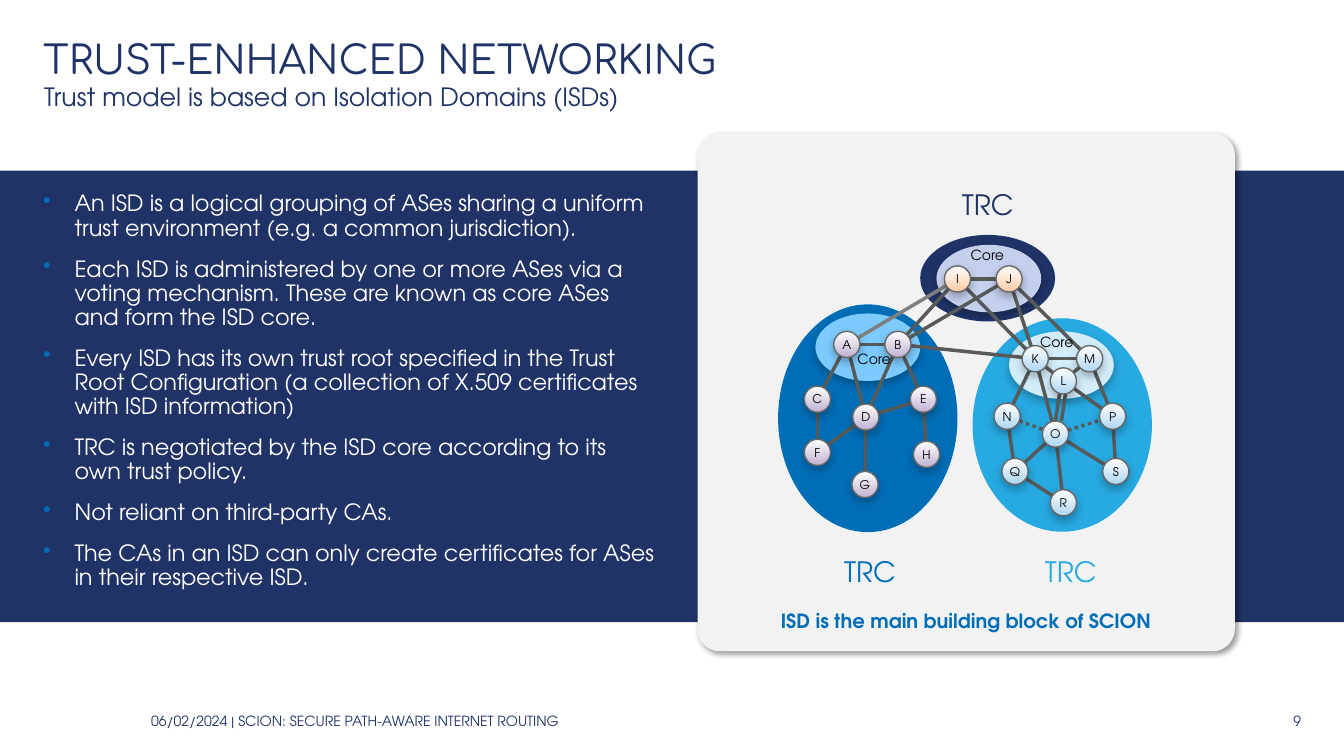
from dataclasses import dataclass
from math import hypot

from lxml.etree import SubElement
from pptx import Presentation
from pptx.dml.color import RGBColor
from pptx.enum.dml import MSO_LINE
from pptx.enum.shapes import MSO_CONNECTOR, MSO_SHAPE as SHAPE
from pptx.enum.text import MSO_ANCHOR as ANCHOR, PP_ALIGN as ALIGN
from pptx.oxml.ns import qn
from pptx.util import Cm, Pt


@dataclass(frozen=True)
class Theme:
    head_font: str = "Comfortaa"
    font: str = "TeX Gyre Adventor"
    navy: str = "203367"
    blue: str = "006EB7"
    sky: str = "27A9E1"
    card: str = "F2F2F2"
    white: str = "FFFFFF"
    black: str = "000000"
    navy_core: str = "C4D0ED"
    blue_core: str = "7CCAFF"
    sky_core: str = "D2EDF9"
    link: str = "585959"
    pale_link: str = "7F7F7F"
    rim: str = "676767"
    peach: str = "FBCBA3"
    lilac: str = "C0B1D1"
    ice: str = "ADD6F2"
    title: float = 28
    trc: float = 20
    subtitle: float = 18
    body: float = 16
    caption: float = 14
    small: float = 10
    node: float = 8.6


T = Theme()
NODE_SIZE = 0.66  # all lengths are in centimetres

BULLETS = [
    "An ISD is a logical grouping of ASes sharing a uniform trust environment (e.g. a common jurisdiction).",
    "Each ISD is administered by one or more ASes via a voting mechanism. "
    "These are known as core ASes and form the ISD core.",
    "Every ISD has its own trust root specified in the Trust Root Configuration "
    "(a collection of X.509 certificates with ISD information)",
    "TRC is negotiated by the ISD core according to its own trust policy.",
    "Not reliant on third-party CAs.",
    "The CAs in an ISD can only create certificates for ASes in their respective ISD.",
]

# Boxes and node centres are relative to the top left of the card.
# Each domain: colour, oval, core colour, core corner, core label corner, TRC corner
DOMAINS = [
    (T.blue, (2.03, 4.32, 4.52, 5.74), T.blue_core, (2.97, 4.55), (3.78, 5.36), (3.2, 10.54)),
    (T.navy, (5.61, 2.57, 3.4, 2.18), T.navy_core, (6.02, 2.82), (6.63, 2.74), (6.17, 1.3)),
    (T.sky, (6.93, 4.67, 4.52, 5.38), T.sky_core, (7.85, 5.0), (8.38, 4.93), (8.26, 10.54)),
]
NODES = {
    T.lilac: {"A": (3.76, 5.33), "B": (5.05, 5.33), "C": (3.02, 6.71), "D": (4.24, 7.16),
              "E": (5.69, 6.71), "F": (3.02, 8.05), "G": (4.22, 8.86), "H": (5.77, 8.1)},
    T.peach: {"I": (6.55, 3.68), "J": (7.85, 3.68)},
    T.ice: {"K": (8.51, 5.69), "L": (9.22, 6.25), "M": (9.88, 5.69), "N": (7.8, 7.14),
            "O": (9.02, 7.59), "P": (10.46, 7.14), "Q": (8.0, 8.53), "R": (9.22, 9.32),
            "S": (10.54, 8.53)},
}
LINKS = ("AB AC AD BD BE CF DE DF DG EH IJ BI BJ IK JK JM BK "
         "KM KL LM KN KO LP MP NQ OQ OR OS PS QR").split()
DOTTED_LINKS = ["NO", "OP"]
DOUBLE_LINK = "LO"


def rgb(color):
    return RGBColor.from_string(color)


def add_run(p, text, size, color, font=T.font, bold=False):
    r = p.add_run()
    r.text = text
    r.font.name, r.font.size, r.font.bold = font, Pt(size), bold
    r.font.color.rgb = rgb(color)


def add_text(s, box, text, size, color, align=ALIGN.LEFT, anchor=ANCHOR.TOP,
             font=T.font, bold=False, wrap=True):
    tf = s.shapes.add_textbox(*map(Cm, box)).text_frame
    set_frame(tf, anchor, wrap)
    p = tf.paragraphs[0]
    p.alignment = align
    add_run(p, text, size, color, font, bold)
    return p


def set_frame(tf, anchor, wrap):
    tf.margin_left = tf.margin_right = tf.margin_top = tf.margin_bottom = 0
    tf.vertical_anchor, tf.word_wrap = anchor, wrap


def add_filled(s, kind, box, color):
    sp = s.shapes.add_shape(kind, *map(Cm, box))
    sp.shadow.inherit = False
    sp.fill.solid()
    sp.fill.fore_color.rgb = rgb(color)
    sp.line.fill.background()
    return sp


def add_shadow(sp, alpha, blur, dist, angle):
    effects = sp._element.spPr.find(qn("a:effectLst"))
    shadow = SubElement(effects, qn("a:outerShdw"), blurRad=str(Pt(blur)), dist=str(Pt(dist)),
                        dir=str(angle * 60000), algn="ctr", rotWithShape="0")
    color = SubElement(shadow, qn("a:srgbClr"), val=T.black)
    SubElement(color, qn("a:alpha"), val=str(alpha * 1000))


def add_link(s, start, end, color=T.link, dotted=False, shift=0):
    """Join the rims of two nodes, moved sideways by shift."""
    (x1, y1), (x2, y2) = start, end
    reach = NODE_SIZE / 2 / hypot(x2 - x1, y2 - y1)
    dx, dy = (x2 - x1) * reach, (y2 - y1) * reach
    ends = (x1 + dx + shift, y1 + dy, x2 - dx + shift, y2 - dy)
    line = s.shapes.add_connector(MSO_CONNECTOR.STRAIGHT, *map(Cm, ends))
    line.line.color.rgb, line.line.width = rgb(color), Pt(2.5)
    if dotted:
        line.line.dash_style = MSO_LINE.ROUND_DOT
    SubElement(line._element.spPr, qn("a:effectLst"))


def add_node(s, centre, name, color):
    x, y = centre
    sp = add_filled(s, SHAPE.OVAL, (x - NODE_SIZE / 2, y - NODE_SIZE / 2, NODE_SIZE, NODE_SIZE), color)
    sp.fill.gradient()
    sp.fill.gradient_angle = 90
    for stop, position, tint in zip(sp.fill.gradient_stops, (0, 1), (color, T.white)):
        stop.position, stop.color.rgb = position, rgb(tint)
    sp.line.color.rgb, sp.line.width = rgb(T.rim), Pt(1)
    add_shadow(sp, 26, 6, 3, 90)
    set_frame(sp.text_frame, ANCHOR.MIDDLE, False)
    p = sp.text_frame.paragraphs[0]
    p.alignment = ALIGN.CENTER
    add_run(p, name, T.node, T.black)


def add_header(s, x, y, w):
    p = add_text(s, (x, y, w, 1), "TRUST-ENHANCED NETWORKING", T.title, T.navy, font=T.head_font)
    p.line_spacing = 0.9
    add_text(s, (x + 0.02, y + 1.04, w, 1), "Trust model is based on Isolation Domains (ISDs)",
             T.subtitle, T.navy)


def add_footer(s, y):
    add_text(s, (3.81, y, 11.43, 1.02), "06/02/2024 | SCION: SECURE PATH-AWARE INTERNET ROUTING",
             T.small, T.navy, anchor=ANCHOR.MIDDLE)
    add_text(s, (25.17, y, 7.62, 1.02), "9", T.small, T.navy, ALIGN.RIGHT, ANCHOR.MIDDLE)


def add_bullets(s, box):
    tf = s.shapes.add_textbox(*map(Cm, box)).text_frame
    set_frame(tf, ANCHOR.MIDDLE, True)
    for i, text in enumerate(BULLETS):
        p = tf.add_paragraph() if i else tf.paragraphs[0]
        pPr = p._p.get_or_add_pPr()
        pPr.set("marL", str(Cm(0.81)))
        pPr.set("indent", str(Cm(-0.79)))
        SubElement(SubElement(pPr, qn("a:buClr")), qn("a:srgbClr"), val=T.blue)
        SubElement(pPr, qn("a:buChar"), char="•")
        p.line_spacing = 0.9
        if i:
            p.space_before = Pt(12)
        add_run(p, text, T.body, T.white)


def add_isd_card(s, x, y, w, h):
    def at(corner, *size):
        return (x + corner[0], y + corner[1], *size)

    card = add_filled(s, SHAPE.ROUNDED_RECTANGLE, (x, y, w, h), T.card)
    card.adjustments[0] = 0.043
    add_shadow(card, 40, 4, 3, 45)

    for color, oval, core_color, core, _, _ in DOMAINS:
        add_filled(s, SHAPE.OVAL, at(oval[:2], *oval[2:]), color)
        add_shadow(add_filled(s, SHAPE.OVAL, at(core, 2.64, 1.7), core_color), 26, 6, 3, 90)

    centres = {name: at(c) for group in NODES.values() for name, c in group.items()}
    for a, b in LINKS:
        add_link(s, centres[a], centres[b])
    for a, b in DOTTED_LINKS:
        add_link(s, centres[a], centres[b], dotted=True)
    for shift in (-0.05, 0.1):
        add_link(s, *(centres[n] for n in DOUBLE_LINK), shift=shift)
    add_link(s, centres["A"], centres["I"], T.pale_link)
    for color, group in NODES.items():
        for name in group:
            add_node(s, centres[name], name, color)

    for color, _, _, _, label, trc in DOMAINS:
        add_text(s, at((label[0] + 0.25, label[1] + 0.13), 1.18, 0.43), "Core", T.small, T.black, wrap=False)
        add_text(s, at(trc, 2.29, 0.99), "TRC", T.trc, color, ALIGN.CENTER, ANCHOR.MIDDLE)
    add_text(s, (x + 0.43, y + 11.99, w - 0.86, 0.8), "ISD is the main building block of SCION",
             T.caption, T.blue, ALIGN.CENTER, bold=True)


def main():
    prs = Presentation()
    prs.slide_width, prs.slide_height = Cm(33.87), Cm(19.05)
    s = prs.slides.add_slide(prs.slide_layouts[6])
    add_header(s, 1.09, 1.02, 31.7)
    add_footer(s, 17.65)
    add_filled(s, SHAPE.RECTANGLE, (0, 4.3, 33.87, 11.38), T.navy)
    add_isd_card(s, 17.58, 3.35, 13.54, 13.06)
    add_bullets(s, (1.07, 3.56, 15.47, 12.62))
    prs.save("out.pptx")


if __name__ == "__main__":
    main()
